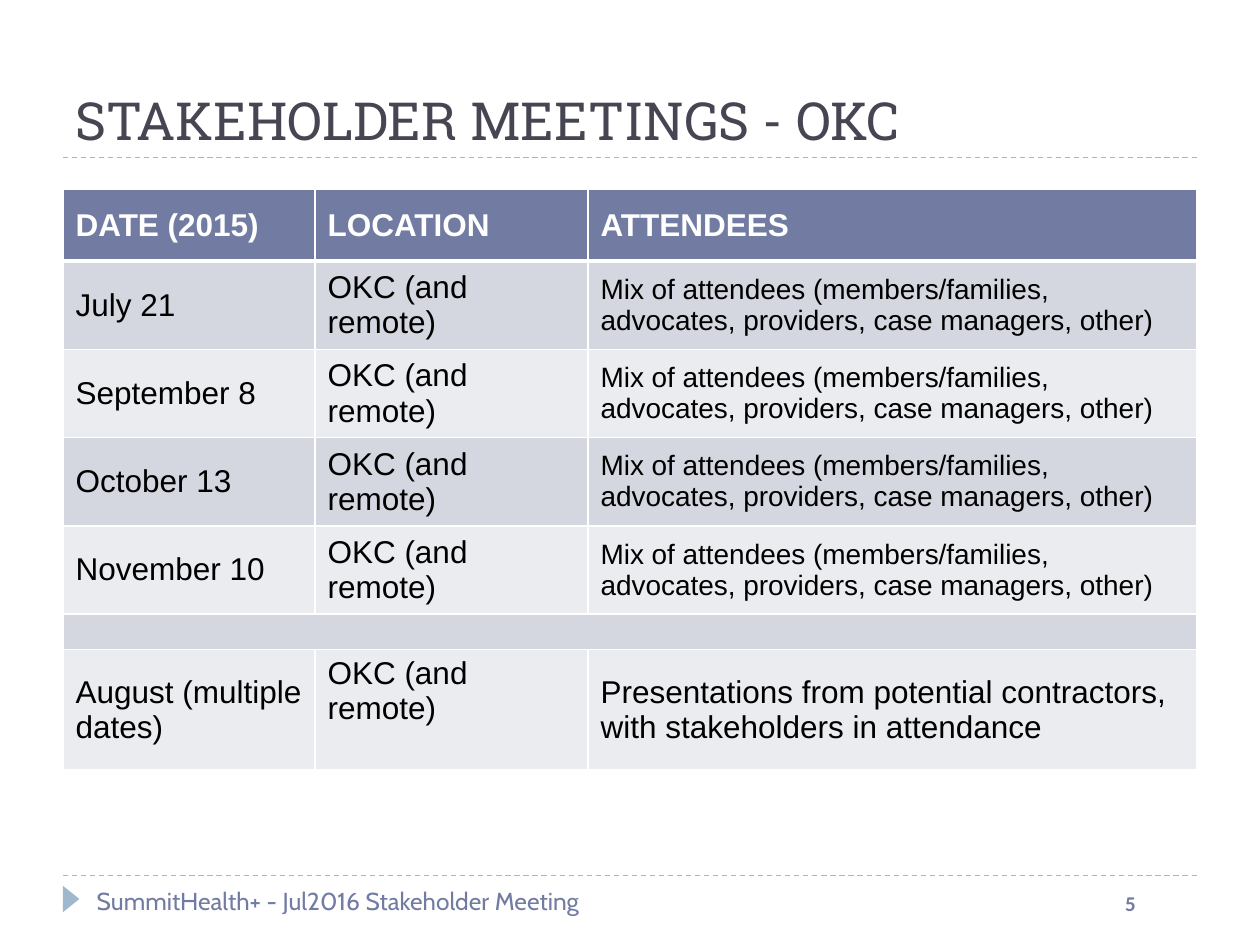
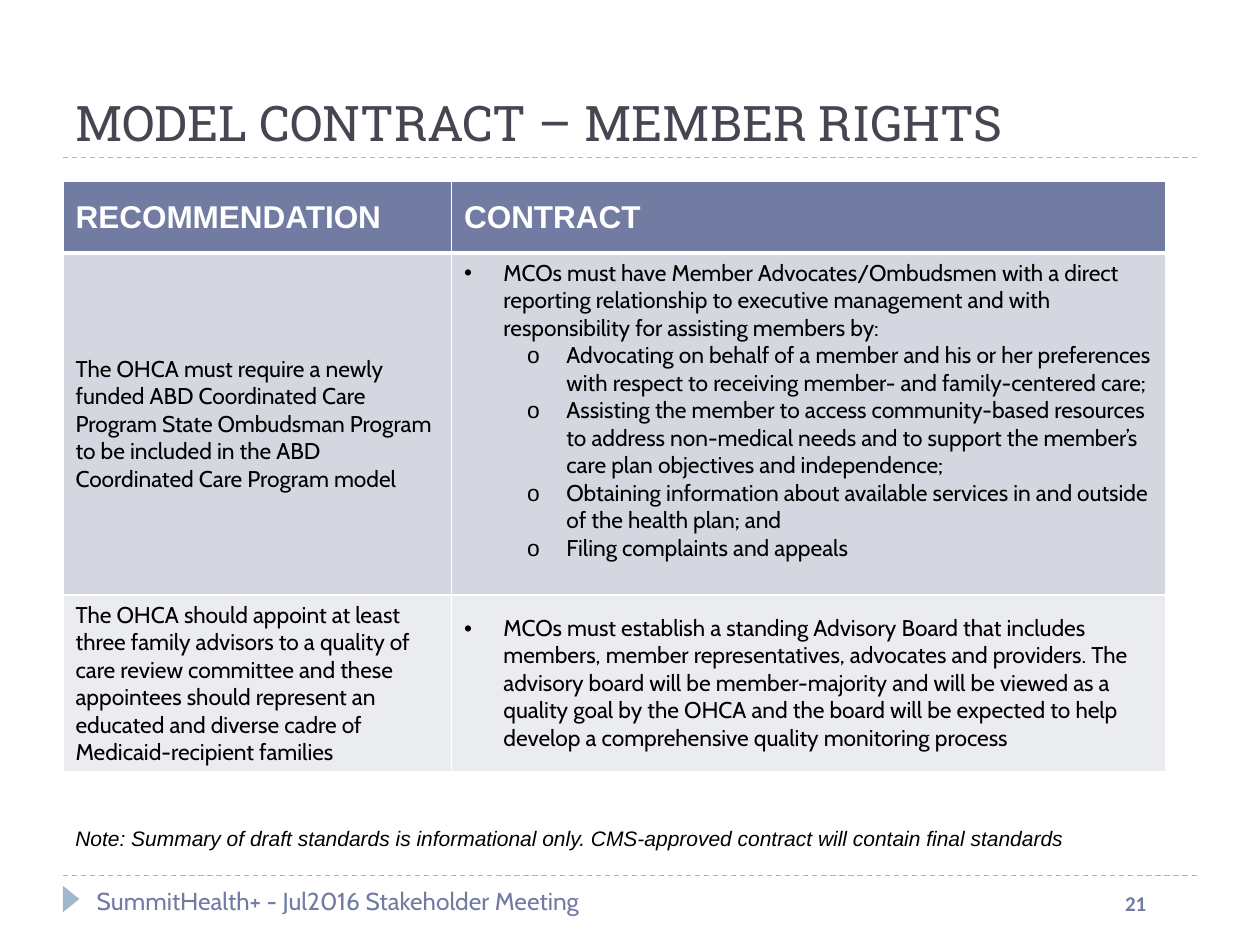
from dataclasses import dataclass

from lxml import etree
from pptx import Presentation
from pptx.dml.color import RGBColor
from pptx.enum.dml import MSO_LINE
from pptx.enum.shapes import MSO_CONNECTOR, MSO_SHAPE
from pptx.enum.text import MSO_ANCHOR
from pptx.oxml.ns import qn
from pptx.util import Pt

DASH = MSO_LINE.DASH
STRAIGHT = MSO_CONNECTOR.STRAIGHT
TRIANGLE = MSO_SHAPE.ISOSCELES_TRIANGLE
TOP, MIDDLE, BOTTOM = MSO_ANCHOR.TOP, MSO_ANCHOR.MIDDLE, MSO_ANCHOR.BOTTOM


@dataclass(frozen=True)
class Theme:
    title_color: str = "464653"
    accent: str = "727CA3"
    rule: str = "9FB8CD"
    band_dark: str = "D5D7E0"
    band_light: str = "EBECF0"
    white: str = "FFFFFF"
    black: str = "000000"
    title_font: str = "Roboto Slab"
    body_font: str = "Arial"
    footer_font: str = "Cabin"
    number_font: str = "Calibri"
    table_size: float = 18
    detail_size: float = 16
    footer_size: float = 14
    contract_size: float = 13
    small_size: float = 12
    spacer_size: float = 10
    left: float = 36
    width: float = 648


@dataclass(frozen=True)
class TextStyle:
    size: float
    font: str
    color: str
    bold: bool = False
    italic: bool = False


@dataclass(frozen=True)
class Entry:
    """Content of one table cell; each paragraph is (bullet, level, text)."""
    paragraphs: tuple
    style: TextStyle
    anchor: int = MIDDLE


THEME = Theme()
HEADER = TextStyle(THEME.table_size, THEME.body_font, THEME.white, bold=True)
BODY = TextStyle(THEME.table_size, THEME.body_font, THEME.black)
DETAIL = TextStyle(THEME.detail_size, THEME.body_font, THEME.black)
CONTRACT = TextStyle(THEME.contract_size, THEME.footer_font, THEME.black)
NOTE = TextStyle(THEME.small_size, THEME.body_font, THEME.black, italic=True)
FOOTER = TextStyle(THEME.footer_size, THEME.footer_font, THEME.accent)
NUMBER = TextStyle(THEME.small_size, THEME.number_font, THEME.accent, bold=True)


def plain(text, style, anchor=MIDDLE):
    return Entry(((None, 0, text),), style, anchor)


class Deck:
    BULLET_INDENT = 22.5
    LEVEL_INDENT = 36

    def __init__(self, theme):
        self.theme = theme
        self.presentation = Presentation()
        self.presentation.slide_width = Pt(720)
        self.presentation.slide_height = Pt(540)
        self.slide = None

    # Page frame: rules, marker, footer and title
    def start_slide(self, title, title_size, number):
        theme = self.theme
        self.slide = self.presentation.slides.add_slide(self.presentation.slide_layouts[6])
        for y in (500.4, 90):
            self.rule(y)
        self.marker()
        self.text(635.8, 505.4, 41.8, 28.8, number, NUMBER)
        self.text(48.2, 502.6, 444, 37.4, "SummitHealth+ - Jul2016 Stakeholder Meeting", FOOTER)
        self.text(theme.left, 12.2, theme.width, 77.8, title,
                  TextStyle(title_size, theme.title_font, theme.title_color), BOTTOM)

    def rule(self, y):
        left, right = self.theme.left, self.theme.left + self.theme.width
        line = self.slide.shapes.add_connector(STRAIGHT, Pt(left), Pt(y), Pt(right), Pt(y))
        line.line.color.rgb = RGBColor.from_string(self.theme.rule)
        line.line.width = Pt(0.75)
        line.line.dash_style = DASH
        etree.SubElement(line._element.spPr, qn("a:effectLst"))

    def marker(self):
        shape = self.slide.shapes.add_shape(TRIANGLE, Pt(33.1), Pt(509), Pt(15.1), Pt(9.4))
        shape.rotation = 90
        shape.shadow.inherit = False
        shape.fill.solid()
        shape.fill.fore_color.rgb = RGBColor.from_string(self.theme.rule)
        shape.line.fill.background()

    # Text
    def text(self, left, top, width, height, text, style, anchor=TOP, wrap=True):
        box = self.slide.shapes.add_textbox(Pt(left), Pt(top), Pt(width), Pt(height))
        box.text_frame.word_wrap = wrap
        box.text_frame.vertical_anchor = anchor
        self.add_run(box.text_frame.paragraphs[0], text, style)

    def add_run(self, paragraph, text, style):
        run = paragraph.add_run()
        run.text = text
        run.font.size = Pt(style.size)
        run.font.name = style.font
        run.font.bold = style.bold
        run.font.italic = style.italic
        run.font.color.rgb = RGBColor.from_string(style.color)

    def add_bullet(self, paragraph, character, level):
        properties = paragraph._p.get_or_add_pPr()
        margin = self.BULLET_INDENT + level * self.LEVEL_INDENT
        properties.set("marL", str(Pt(margin)))
        properties.set("indent", str(-Pt(self.BULLET_INDENT)))
        font = etree.SubElement(properties, qn("a:buFont"))
        font.set("typeface", self.theme.body_font)
        etree.SubElement(properties, qn("a:buChar")).set("char", character)

    # Tables: a header row above alternating bands; None is a full-width spacer
    def table(self, top, widths, heights, headings, body):
        frame = self.slide.shapes.add_table(
            len(heights), len(widths), Pt(self.theme.left), Pt(top),
            Pt(sum(widths)), Pt(sum(heights)))
        table = frame.table
        table.horz_banding = False
        for column, width in zip(table.columns, widths):
            column.width = Pt(width)
        for row, height in zip(table.rows, heights):
            row.height = Pt(height)
        rows = [[plain(heading, HEADER) for heading in headings], *body]
        for row_index, entries in enumerate(rows):
            for column_index in range(len(widths)):
                cell = table.cell(row_index, column_index)
                self.style_cell(cell, row_index)
                if entries:
                    self.fill_cell(cell, entries[column_index])
                else:
                    end = etree.SubElement(cell.text_frame.paragraphs[0]._p,
                                           qn("a:endParaRPr"))
                    end.set("sz", str(self.theme.spacer_size * 100))
            if not entries:
                table.cell(row_index, 0).merge(table.cell(row_index, len(widths) - 1))

    def style_cell(self, cell, row_index):
        theme = self.theme
        borders = {"L": 1, "R": 1,
                   "T": 3 if row_index == 1 else 1,
                   "B": 3 if row_index == 0 else 1}
        properties = cell._tc.get_or_add_tcPr()
        for side, width in borders.items():
            line = etree.SubElement(properties, qn(f"a:ln{side}"))
            line.set("w", str(Pt(width)))
            fill = etree.SubElement(line, qn("a:solidFill"))
            etree.SubElement(fill, qn("a:srgbClr")).set("val", theme.white)
        band = theme.band_dark if row_index % 2 else theme.band_light
        cell.fill.solid()
        cell.fill.fore_color.rgb = RGBColor.from_string(band if row_index else theme.accent)

    def fill_cell(self, cell, entry):
        cell.vertical_anchor = entry.anchor
        for index, (bullet, level, text) in enumerate(entry.paragraphs):
            frame = cell.text_frame
            paragraph = frame.add_paragraph() if index else frame.paragraphs[0]
            if bullet:
                self.add_bullet(paragraph, bullet, level)
            self.add_run(paragraph, text, entry.style)


def build_meetings(deck):
    deck.start_slide("STAKEHOLDER MEETINGS - OKC", 30, "5")
    location = "OKC (and remote)"
    attendees = ("Mix of attendees (members/families, advocates, providers, "
                 "case managers, other)")
    dates = ("July 21", "September 8", "October 13", "November 10")
    meetings = [(plain(date, BODY), plain(location, BODY), plain(attendees, DETAIL))
                for date in dates]
    presentations = (
        plain("August (multiple dates)", BODY),
        plain(location, BODY, TOP),
        plain("Presentations from potential contractors, with stakeholders "
              "in attendance", BODY))
    deck.table(108.4, (144, 156, 348), (40.8, *[47.5] * len(dates), 20.2, 69),
               ("DATE (2015)", "LOCATION", "ATTENDEES"),
               [*meetings, None, presentations])


def build_member_rights(deck):
    deck.start_slide("MODEL CONTRACT – MEMBER RIGHTS", 28, "21")
    advocates = Entry((
        ("•", 0, "MCOs must have Member Advocates/Ombudsmen with a direct reporting "
                 "relationship to executive management and with responsibility for "
                 "assisting members by:"),
        ("o", 1, "Advocating on behalf of a member and his or her preferences with "
                 "respect to receiving member- and family-centered care;"),
        ("o", 1, "Assisting the member to access community-based resources to address "
                 "non-medical needs and to support the member’s care plan objectives "
                 "and independence;"),
        ("o", 1, "Obtaining information about available services in and outside of "
                 "the health plan; and"),
        ("o", 1, "Filing complaints and appeals"),
    ), CONTRACT, TOP)
    board = Entry((
        ("•", 0, "MCOs must establish a standing Advisory Board that includes members, "
                 "member representatives, advocates and providers. The advisory board "
                 "will be member-majority and will be viewed as a quality goal by the "
                 "OHCA and the board will be expected to help develop a comprehensive "
                 "quality monitoring process"),
    ), CONTRACT)
    ombudsman = plain("The OHCA must require a newly funded ABD Coordinated Care Program "
                      "State Ombudsman Program to be included in the ABD Coordinated "
                      "Care Program model", CONTRACT)
    advisors = plain("The OHCA should appoint at least three family advisors to a quality "
                     "of care review committee and these appointees should represent an "
                     "educated and diverse cadre of Medicaid-recipient families", CONTRACT)
    deck.table(103.8, (222, 408), (40.8, 195.4, 100.8),
               ("RECOMMENDATION", "CONTRACT"),
               [(ombudsman, advocates), (advisors, board)])
    deck.text(36, 468, 584, 21.6,
              "Note: Summary of draft standards is informational only. "
              "CMS-approved contract will contain final standards", NOTE, wrap=False)


def main():
    deck = Deck(THEME)
    build_meetings(deck)
    build_member_rights(deck)
    deck.presentation.save("out.pptx")


if __name__ == "__main__":
    main()
